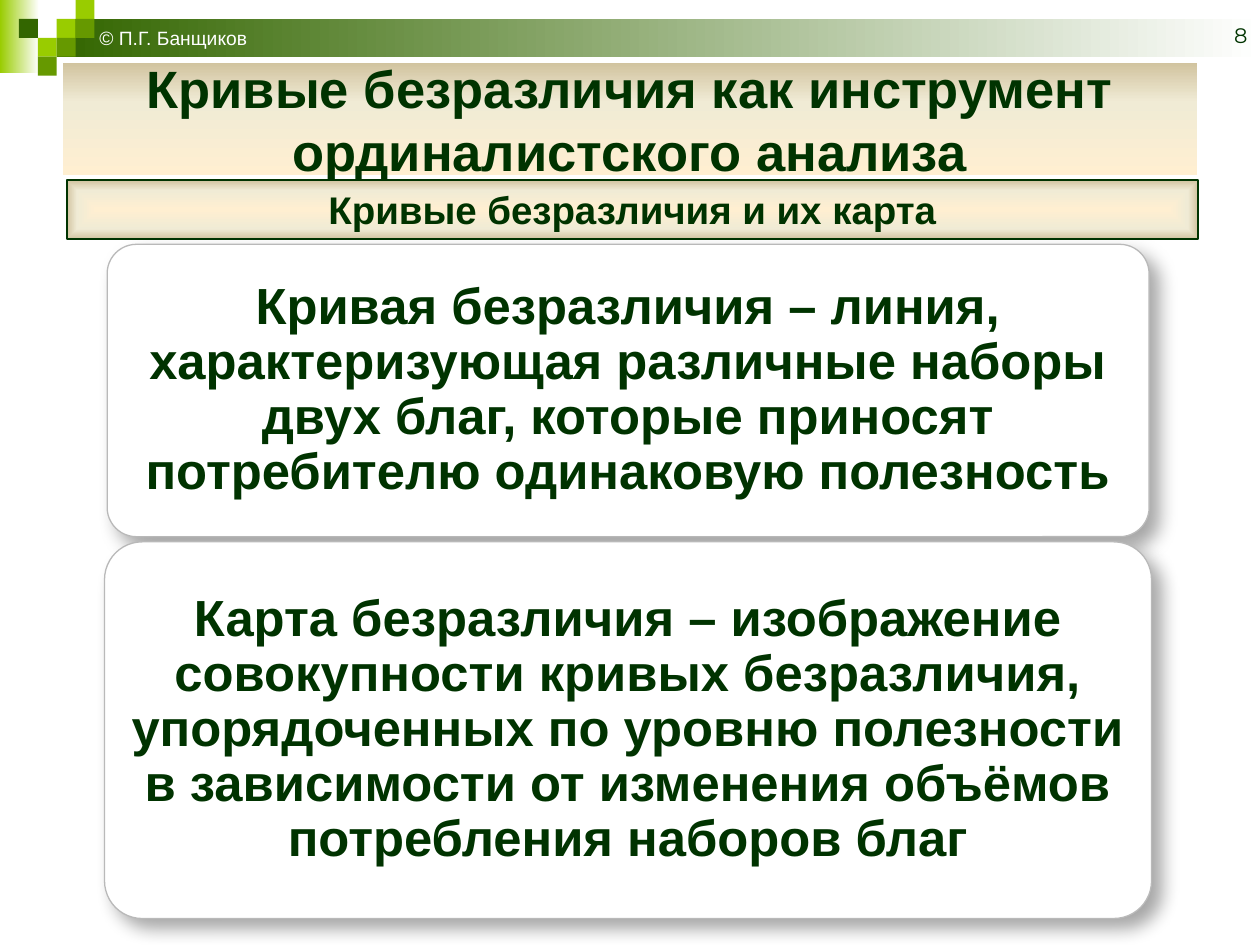
from pptx import Presentation
from pptx.dml.color import RGBColor
from pptx.enum.shapes import MSO_SHAPE
from pptx.enum.text import MSO_ANCHOR, MSO_AUTO_SIZE, PP_ALIGN
from pptx.oxml import parse_xml
from pptx.oxml.ns import nsdecls, qn
from pptx.util import Inches, Pt

RECT, ROUNDED = MSO_SHAPE.RECTANGLE, MSO_SHAPE.ROUNDED_RECTANGLE
TOP, MIDDLE, BOTTOM = MSO_ANCHOR.TOP, MSO_ANCHOR.MIDDLE, MSO_ANCHOR.BOTTOM
LEFT, CENTER, RIGHT = PP_ALIGN.LEFT, PP_ALIGN.CENTER, PP_ALIGN.RIGHT
CELL = Inches(0.15)
INK = "003300"
SAND = [(0, "FFEFD1"), (65, "F0EBD5"), (100, "D1C39F")]
RIGHTWARD = '<a:lin ang="0" scaled="0"/>'
UPWARD = '<a:lin ang="16200000" scaled="0"/>'
INWARD = '<a:path path="rect"><a:fillToRect l="50000" t="50000" r="50000" b="50000"/></a:path>'


def paint(shape, color, direction=None):
    if direction is None:
        shape.fill.solid()
        shape.fill.fore_color.rgb = RGBColor.from_string(color)
        return
    shape.fill.gradient()
    stops = "".join(
        f'<a:gs pos="{share * 1000}"><a:srgbClr val="{tone}"/></a:gs>' for share, tone in color
    )
    gradient = shape.fill._xPr.find(qn("a:gradFill"))
    gradient.getparent().replace(gradient, parse_xml(
        f'<a:gradFill {nsdecls("a")} rotWithShape="1"><a:gsLst>{stops}</a:gsLst>{direction}</a:gradFill>'
    ))


def write(shape, text, size, align=CENTER, anchor=MIDDLE, color=INK, bold=True, font="Arial"):
    frame = shape.text_frame
    frame.text = text
    frame.word_wrap = True
    frame.auto_size = MSO_AUTO_SIZE.NONE
    frame.vertical_anchor = anchor
    paragraph = frame.paragraphs[0]
    paragraph.alignment = align
    style = paragraph.runs[0].font
    style.name, style.size, style.bold = font, Pt(size), bold
    style.color.rgb = RGBColor.from_string(color)


prs = Presentation()
prs.slide_width, prs.slide_height = Inches(10), Inches(7.5)
slide = prs.slides.add_slide(prs.slide_layouts[5])
shapes = slide.shapes

header = [
    (0, 0, 2.07, 3.87, [(0, "99CC00"), (100, "FFFFFF")], RIGHTWARD),
    (3, 1, 63.67, 2, [(0, "336600"), (100, "FFFFFF")], RIGHTWARD),
]
mosaic = [(3, 1, "99CC00"), (4, 0, "99CC00"), (4, 1, "669900"), (2, 2, "99CC00"),
          (1, 1, "336600"), (3, 2, "669900"), (2, 3, "669900")]
header += [(column, row, 1, 1, color, None) for column, row, color in mosaic]
for column, row, columns, rows, color, direction in header:
    tile = shapes.add_shape(RECT, *(int(n * CELL) for n in (column, row, columns, rows)))
    tile.shadow.inherit = False
    tile.line.fill.background()
    paint(tile, color, direction)

page_number = shapes.add_textbox(*(int(n * CELL) for n in (62.53, 1.07, 4.13, 1.8)))
write(page_number, "8", 12, RIGHT, BOTTOM, bold=False, font="Montserrat")
author = shapes.add_textbox(*(int(n * CELL) for n in (4.6, 1.07, 9.87, 1.93)))
write(author, "© П.Г. Банщиков", 11, LEFT, TOP, "FFFFFF", False)

definitions = [
    ((5.67, 12.93, 55.13, 15.47),
     "Кривая безразличия – линия, характеризующая различные наборы двух благ, "
     "которые приносят потребителю одинаковую полезность"),
    ((5.53, 28.67, 55.4, 19.93),
     "Карта безразличия – изображение совокупности кривых безразличия, упорядоченных "
     "по уровню полезности в зависимости от изменения объёмов потребления наборов благ"),
]
for place, definition in definitions:
    card = shapes.add_shape(ROUNDED, *(int(n * CELL) for n in place))
    card.adjustments[0] = 0.1
    paint(card, "FFFFFF")
    card.line.color.rgb = RGBColor.from_string("B9B9B9")
    card.line.width = Pt(0.75)
    card.shadow.inherit = False
    card._element.spPr.find(qn("a:effectLst")).append(parse_xml(
        f'<a:outerShdw {nsdecls("a")} blurRad="{Pt(10.2)}" dist="{Pt(8)}" dir="2700000" '
        'algn="tl" rotWithShape="0"><a:srgbClr val="000000"><a:alpha val="35000"/>'
        '</a:srgbClr></a:outerShdw>'
    ))
    write(card, definition, 29)
    frame = card.text_frame
    frame.margin_left = frame.margin_right = Inches(0.12)
    frame.margin_top = frame.margin_bottom = Inches(0.12)
    frame.paragraphs[0].line_spacing = 0.9

title = shapes.title
title.left, title.top, title.width, title.height = (
    int(n * CELL) for n in (3.33, 3.33, 60, 5.93)
)
paint(title, SAND, UPWARD)
write(title, "Кривые безразличия как инструмент ординалистского анализа", 30)

subtitle = shapes.add_shape(RECT, *(int(n * CELL) for n in (3.53, 9.53, 59.87, 3.13)))
subtitle.shadow.inherit = False
paint(subtitle, SAND, INWARD)
subtitle.line.color.rgb = RGBColor.from_string(INK)
subtitle.line.width = Pt(1)
write(subtitle, "Кривые безразличия и их карта", 22, anchor=TOP)

prs.save("out.pptx")
